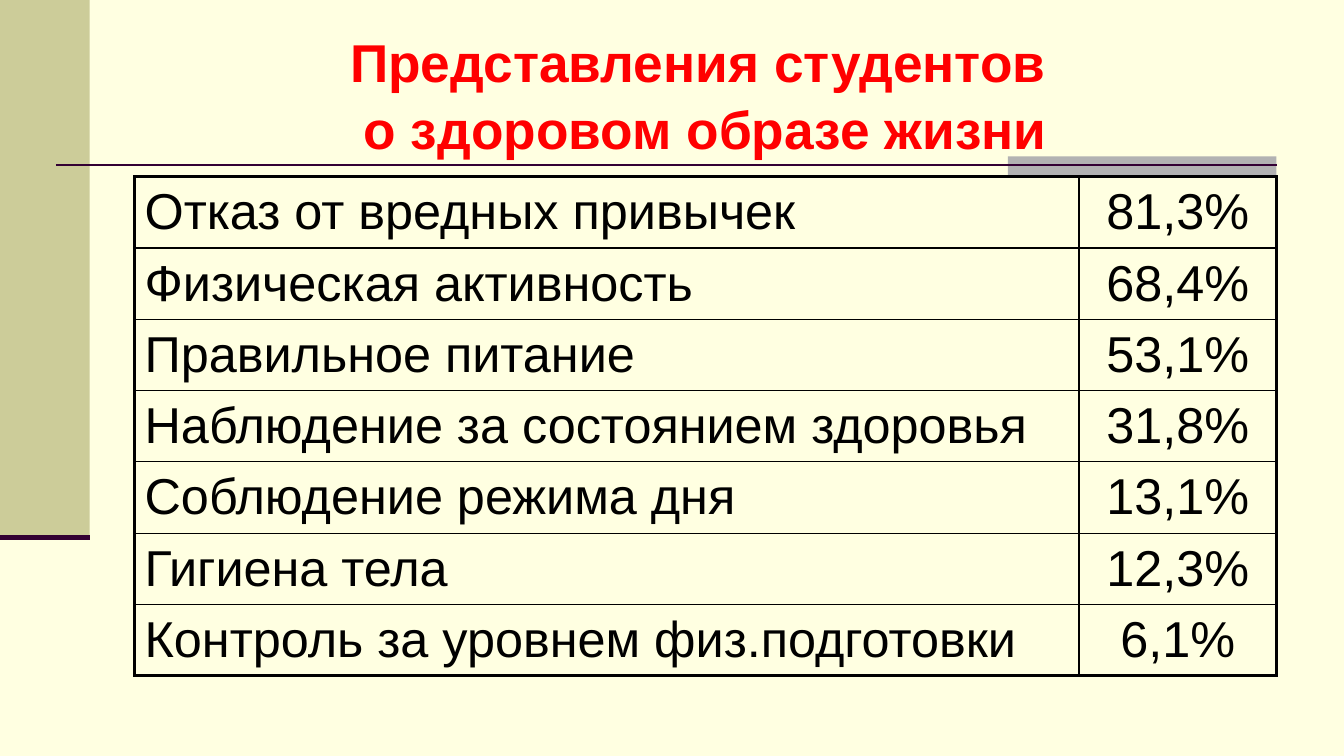
from lxml import etree
from pptx import Presentation
from pptx.dml.color import RGBColor
from pptx.enum.shapes import MSO_CONNECTOR, MSO_SHAPE
from pptx.enum.text import MSO_ANCHOR, PP_ALIGN
from pptx.oxml.ns import qn
from pptx.util import Cm, Pt

STRAIGHT, RECT = MSO_CONNECTOR.STRAIGHT, MSO_SHAPE.RECTANGLE
MIDDLE = MSO_ANCHOR.MIDDLE
LEFT, CENTER = PP_ALIGN.LEFT, PP_ALIGN.CENTER

CREAM = RGBColor(0xFF, 0xFF, 0xE1)
OLIVE = RGBColor(0xCC, 0xCC, 0x99)
GREY = RGBColor(0xB2, 0xB2, 0xB2)
PLUM = RGBColor(0x33, 0x00, 0x33)
RED = RGBColor(0xFF, 0x00, 0x00)
BLACK = RGBColor(0x00, 0x00, 0x00)

FONT = "Arial"
THIN, THICK = 1, 2.25
ANSWERS = [
    ("Отказ от вредных привычек", "81,3%"),
    ("Физическая активность", "68,4%"),
    ("Правильное питание", "53,1%"),
    ("Наблюдение за состоянием здоровья", "31,8%"),
    ("Соблюдение режима дня", "13,1%"),
    ("Гигиена тела", "12,3%"),
    ("Контроль за уровнем физ.подготовки", "6,1%"),
]


def set_border(cell, side, width):
    ln = etree.SubElement(cell._tc.get_or_add_tcPr(), qn("a:" + side), w=str(Pt(width)))
    fill = etree.SubElement(ln, qn("a:solidFill"))
    etree.SubElement(fill, qn("a:srgbClr"), val=str(BLACK))


prs = Presentation()
prs.slide_width, prs.slide_height = Cm(33.87), Cm(19.05)
s = prs.slides.add_slide(prs.slide_layouts[6])
s.background.fill.solid()
s.background.fill.fore_color.rgb = CREAM

# Side band and grey accent
for x, y, w, h, color in [(0, 0, 2.26, 13.55, OLIVE), (25.4, 3.94, 6.77, 0.5, GREY)]:
    sp = s.shapes.add_shape(RECT, Cm(x), Cm(y), Cm(w), Cm(h))
    sp.shadow.inherit = False
    sp.fill.solid()
    sp.fill.fore_color.rgb = color
    sp.line.fill.background()

# Rules under the title and the side band
for x1, x2, y, width in [(1.41, 32.17, 4.15, 1.5), (0, 2.26, 13.55, 3.5)]:
    rule = s.shapes.add_connector(STRAIGHT, Cm(x1), Cm(y), Cm(x2), Cm(y))
    rule.line.color.rgb = PLUM
    rule.line.width = Pt(width)
    etree.SubElement(rule._element.spPr, qn("a:effectLst"))

# Title
title = s.shapes.add_textbox(Cm(3.39), Cm(0.76), Cm(28.78), Cm(3.18))
tf = title.text_frame
tf.word_wrap = True
tf.vertical_anchor = MIDDLE
p = tf.paragraphs[0]
p.text = "Представления студентов \vо здоровом образе жизни"
p.alignment = CENTER
p.line_spacing = 1.05
p.font.name, p.font.size, p.font.bold = FONT, Pt(38), True
p.font.color.rgb = RED

# Table of answers
rows = len(ANSWERS)
table = s.shapes.add_table(rows, 2, Cm(3.39), Cm(4.45), Cm(28.78), Cm(12.58)).table
table.first_row = table.horz_banding = False
table.columns[0].width, table.columns[1].width = Cm(23.8), Cm(4.98)
for i, answer in enumerate(ANSWERS):
    for j, text in enumerate(answer):
        cell = table.cell(i, j)
        cell.vertical_anchor = MIDDLE
        p = cell.text_frame.paragraphs[0]
        p.text = text
        p.alignment = CENTER if j else LEFT
        p.font.name, p.font.size = FONT, Pt(36)
        p.font.color.rgb = BLACK
        # Thick lines only on the outer edge
        outer = {"lnL": j == 0, "lnR": j == 1, "lnT": i == 0, "lnB": i == rows - 1}
        for side, is_outer in outer.items():
            set_border(cell, side, THICK if is_outer else THIN)
        cell.fill.background()

prs.save("out.pptx")
